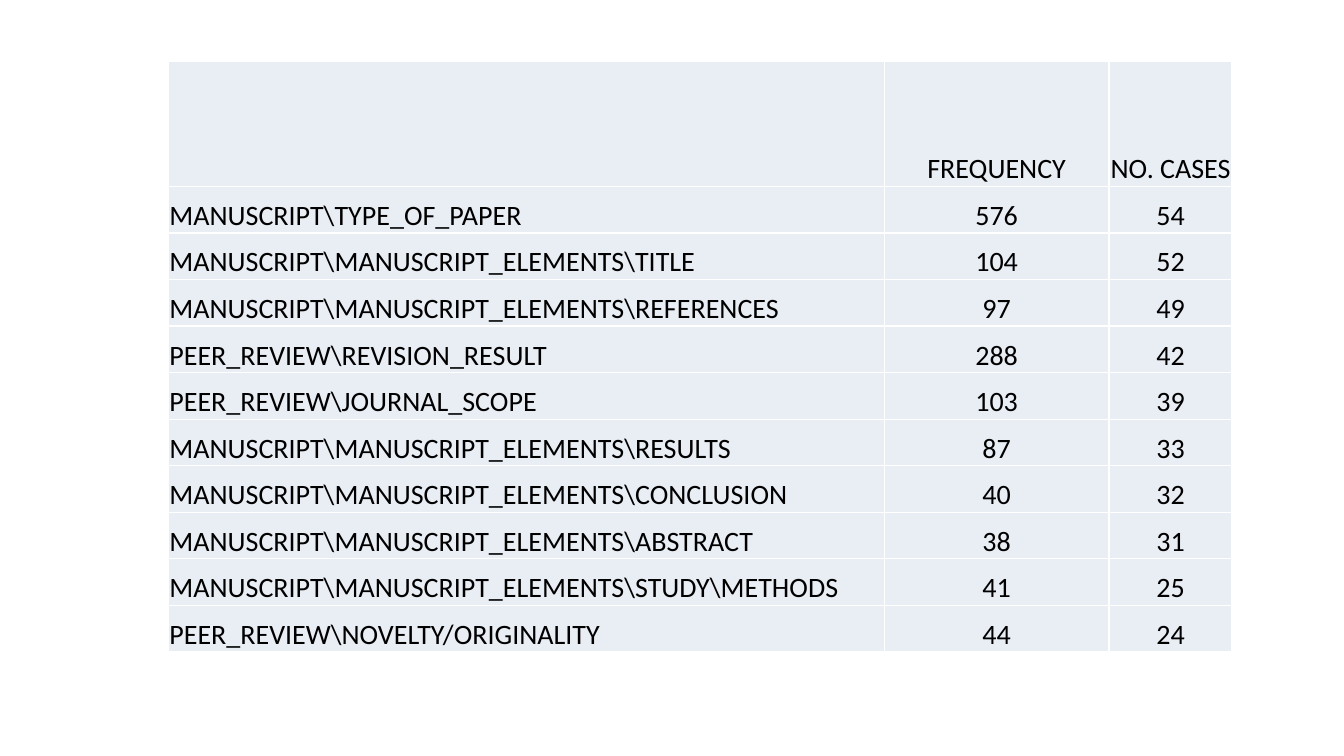
from dataclasses import dataclass

from lxml.etree import SubElement
from pptx import Presentation
from pptx.dml.color import RGBColor
from pptx.enum.text import MSO_ANCHOR as Anchor, PP_ALIGN as Align
from pptx.oxml.ns import qn
from pptx.util import Inches, Pt


@dataclass(frozen=True)
class Theme:
    font: str = "Calibri"
    text_size: int = 20
    text_color: str = "000000"
    cell_fill: str = "E9EDF4"
    border_color: str = "FFFFFF"
    border_width: int = 1
    cell_margin: float = 0.01


HEADINGS = ("", "FREQUENCY", "NO. CASES")
CODES = (
    (r"MANUSCRIPT\TYPE_OF_PAPER", 576, 54),
    (r"MANUSCRIPT\MANUSCRIPT_ELEMENTS\TITLE", 104, 52),
    (r"MANUSCRIPT\MANUSCRIPT_ELEMENTS\REFERENCES", 97, 49),
    (r"PEER_REVIEW\REVISION_RESULT", 288, 42),
    (r"PEER_REVIEW\JOURNAL_SCOPE", 103, 39),
    (r"MANUSCRIPT\MANUSCRIPT_ELEMENTS\RESULTS", 87, 33),
    (r"MANUSCRIPT\MANUSCRIPT_ELEMENTS\CONCLUSION", 40, 32),
    (r"MANUSCRIPT\MANUSCRIPT_ELEMENTS\ABSTRACT", 38, 31),
    (r"MANUSCRIPT\MANUSCRIPT_ELEMENTS\STUDY\METHODS", 41, 25),
    (r"PEER_REVIEW\NOVELTY/ORIGINALITY", 44, 24),
)
COLUMN_WIDTHS = (7.1, 2.23, 1.22)
TABLE_HEIGHT = 5.86
HEADER_HEIGHT = 1.24


class PageBuilder:
    def __init__(self, page, theme):
        self.page = page
        self.theme = theme

    def table(self, left, top, widths, heights, rows):
        frame = self.page.shapes.add_table(
            len(rows), len(widths), Inches(left), Inches(top),
            Inches(sum(widths)), Inches(sum(heights)))
        table = frame.table
        table.first_row = table.horz_banding = False
        for column, width in zip(table.columns, widths):
            column.width = Inches(width)
        for row, height, values in zip(table.rows, heights, rows):
            row.height = Inches(height)
            for index, (cell, value) in enumerate(zip(row.cells, values)):
                self.cell(cell, str(value), Align.CENTER if index else Align.LEFT)

    def cell(self, cell, text, alignment):
        theme = self.theme
        cell.vertical_anchor = Anchor.BOTTOM
        cell.margin_left = cell.margin_right = cell.margin_top = Inches(theme.cell_margin)
        cell.margin_bottom = 0
        self.borders(cell)
        cell.fill.solid()
        cell.fill.fore_color.rgb = RGBColor.from_string(theme.cell_fill)
        para = cell.text_frame.paragraphs[0]
        para.text = text
        para.alignment = alignment
        para.font.name = theme.font
        for span in para.runs:
            span.font.name = theme.font
            span.font.size = Pt(theme.text_size)
            span.font.color.rgb = RGBColor.from_string(theme.text_color)

    def borders(self, cell):
        properties = cell._tc.get_or_add_tcPr()
        for side in ("lnL", "lnR", "lnT", "lnB"):
            line = SubElement(properties, qn(f"a:{side}"), w=str(Pt(self.theme.border_width)))
            fill = SubElement(line, qn("a:solidFill"))
            SubElement(fill, qn("a:srgbClr"), val=self.theme.border_color)


def main():
    deck = Presentation()
    deck.slide_width, deck.slide_height = Inches(13.33), Inches(7.5)
    blank_layout = deck.slide_layouts[6]
    builder = PageBuilder(deck.slides.add_slide(blank_layout), Theme())
    code_height = (TABLE_HEIGHT - HEADER_HEIGHT) / len(CODES)
    heights = [HEADER_HEIGHT] + [code_height] * len(CODES)
    builder.table(1.67, 0.61, COLUMN_WIDTHS, heights, (HEADINGS, *CODES))
    deck.save("out.pptx")


if __name__ == "__main__":
    main()
